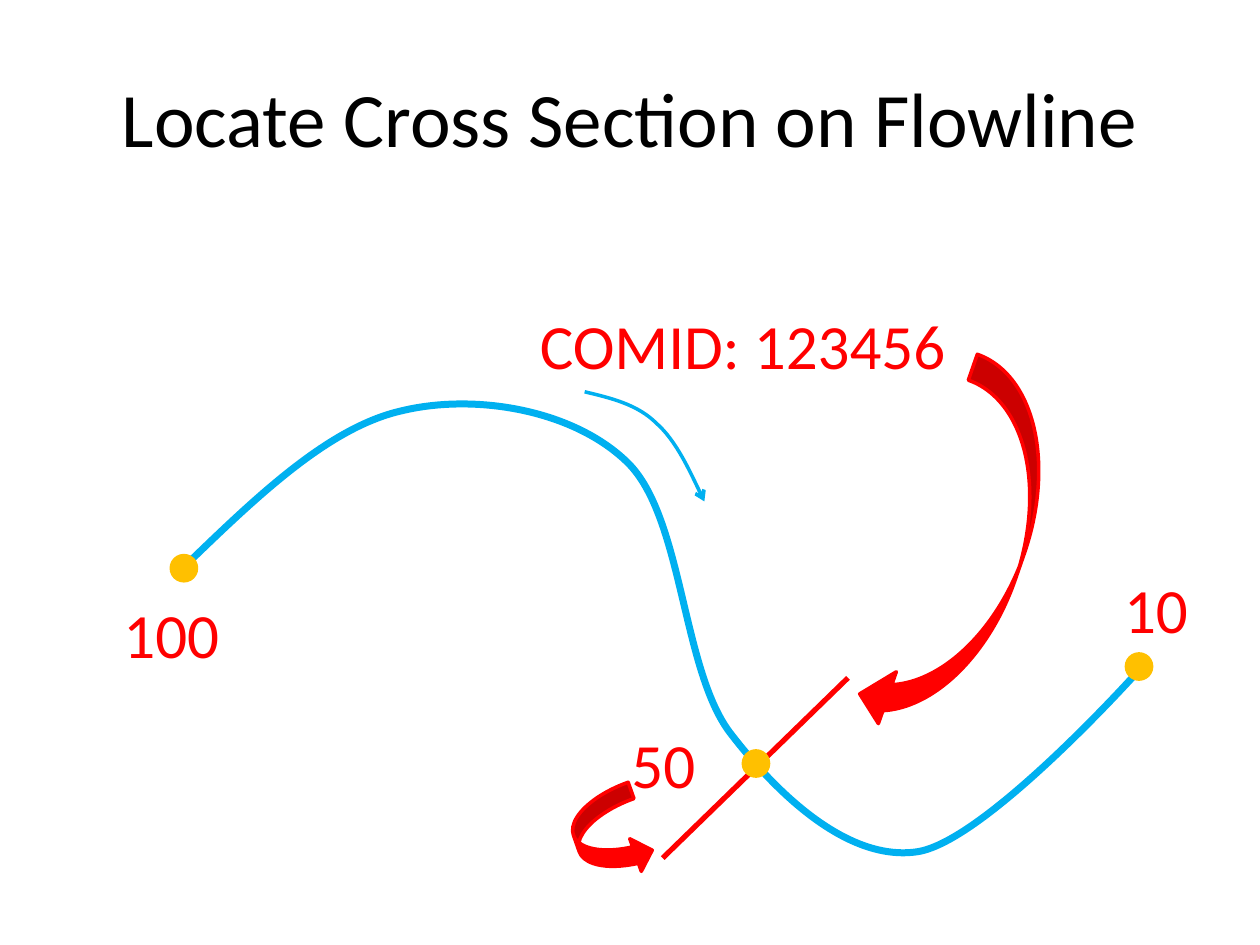
from lxml import etree
from pptx import Presentation
from pptx.dml.color import RGBColor
from pptx.enum import shapes, text
from pptx.oxml import ns
from pptx.util import Inches, Pt

BLACK = RGBColor(0x00, 0x00, 0x00)
RED = RGBColor(0xFF, 0x00, 0x00)
BLUE = RGBColor(0x00, 0xB0, 0xF0)
AMBER = RGBColor(0xFF, 0xC0, 0x00)
NODE_SIZE = 0.22


def style_text(frame, words, size, color):
    frame.text = words
    paragraph = frame.paragraphs[0]
    paragraph.alignment = text.PP_ALIGN.CENTER
    paragraph.font.name = "Calibri"
    paragraph.font.size = Pt(size)
    paragraph.font.color.rgb = color


def style_line(line, color, width):
    line.color.rgb = color
    line.width = Pt(width)


def add_title(slide, words):
    title = slide.shapes.title
    title.left, title.top = Inches(0.5), Inches(0.3)
    title.width, title.height = Inches(9), Inches(1.25)
    title.text_frame.vertical_anchor = text.MSO_ANCHOR.MIDDLE
    style_text(title.text_frame, words, 44, BLACK)


def add_label(slide, words, left, top, width):
    label = slide.shapes.add_textbox(
        Inches(left), Inches(top), Inches(width), Inches(0.71))
    label.text_frame.word_wrap = True
    label.text_frame.auto_size = text.MSO_AUTO_SIZE.SHAPE_TO_FIT_TEXT
    style_text(label.text_frame, words, 36, RED)


def add_solid(slide, kind, left, top, width, height, color, rotation=0):
    solid = slide.shapes.add_shape(
        kind, Inches(left), Inches(top), Inches(width), Inches(height))
    solid.rotation = rotation
    solid.shadow.inherit = False
    solid.fill.solid()
    solid.fill.fore_color.rgb = color
    style_line(solid.line, color, 2)


def add_node(slide, center_x, center_y):
    add_solid(slide, shapes.MSO_SHAPE.OVAL, center_x - 0.1, center_y - 0.1,
              0.2, 0.2, AMBER)


def add_curve(slide, start, controls, width):
    builder = slide.shapes.build_freeform(Inches(start[0]), Inches(start[1]))
    builder.add_line_segments(
        [(Inches(x), Inches(y)) for x, y in controls], close=False)
    curve = builder.convert_to_shape()
    curve.shadow.inherit = False
    curve.fill.background()
    style_line(curve.line, BLUE, width)
    outline = next(curve.element.iter(ns.qn("a:path")))
    steps = outline.findall(ns.qn("a:lnTo"))
    for first in range(0, len(steps), 3):
        bezier = etree.SubElement(outline, ns.qn("a:cubicBezTo"))
        for step in steps[first:first + 3]:
            bezier.append(step[0])
            outline.remove(step)
    return curve


def add_arrowhead(curve):
    line = curve.element.spPr.find(ns.qn("a:ln"))
    etree.SubElement(line, ns.qn("a:tailEnd"), type="arrow")


def add_cross_section(slide, start, end):
    section = slide.shapes.add_connector(
        shapes.MSO_CONNECTOR.STRAIGHT,
        *(Inches(value) for value in start + end))
    style_line(section.line, RED, 3)
    etree.SubElement(section.element.spPr, ns.qn("a:effectLst"))


def main():
    deck = Presentation()
    deck.slide_width, deck.slide_height = Inches(10), Inches(7.5)
    slide = deck.slides.add_slide(deck.slide_layouts[5])
    add_title(slide, "Locate Cross Section on Flowline")

    add_curve(slide, (1.48, 4.48), [
        (2.04, 3.94), (2.61, 3.39), (3.19, 3.26),
        (3.77, 3.12), (4.55, 3.25), (4.98, 3.67),
        (5.42, 4.1), (5.41, 5.3), (5.79, 5.81),
        (6.18, 6.32), (6.74, 6.84), (7.28, 6.76),
        (7.82, 6.68), (9.03, 5.33), (9.03, 5.33)], 4)
    add_cross_section(slide, (6.73, 5.38), (5.26, 6.81))

    for center in ((9.04, 5.29), (1.46, 4.51), (6, 6.06)):
        add_node(slide, *center)

    flow_direction = add_curve(slide, (4.64, 3.11), [
        (4.85, 3.16), (5.06, 3.21), (5.21, 3.36),
        (5.37, 3.5), (5.59, 3.98), (5.59, 3.98)], 2)
    add_arrowhead(flow_direction)

    for label in (("10", 8.76, 4.48, 0.83), ("100", 0.81, 4.68, 1.1),
                  ("50", 4.85, 5.71, 0.83), ("COMID: 123456", 3.65, 2.38, 4.49)):
        add_label(slide, *label)

    add_solid(slide, shapes.MSO_SHAPE.CURVED_LEFT_ARROW,
              7.23, 2.87, 0.87, 3.07, RED, 19.1)
    add_solid(slide, shapes.MSO_SHAPE.CURVED_RIGHT_ARROW,
              4.57, 6.28, 0.55, 0.71, RED, 340.5)
    deck.save("out.pptx")


if __name__ == "__main__":
    main()
